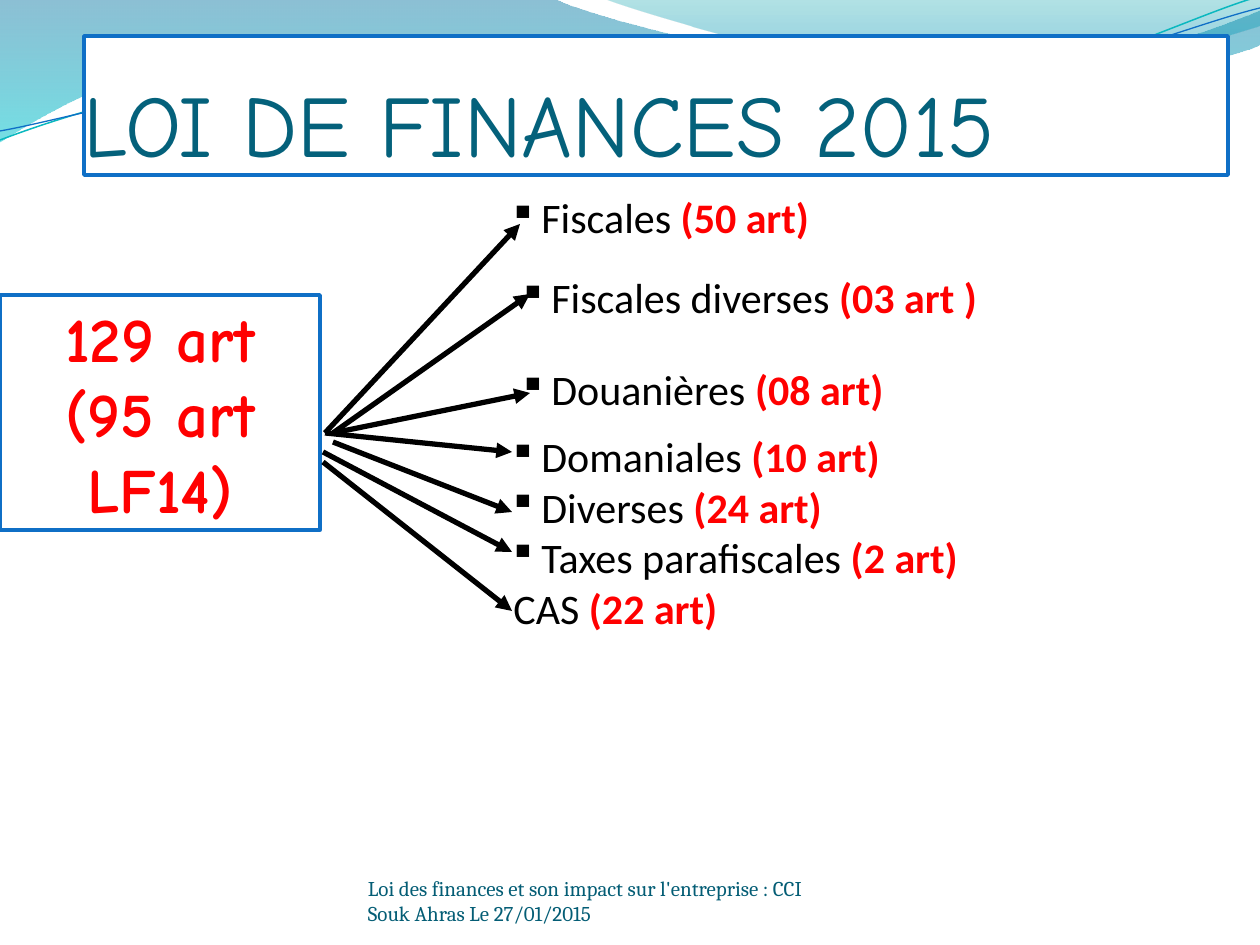
"""Build the slide that breaks down the articles of the 2015 finance law."""
from lxml import etree
from pptx import Presentation
from pptx.dml.color import RGBColor
from pptx.enum.shapes import MSO_CONNECTOR, MSO_SHAPE
from pptx.enum.text import MSO_ANCHOR, MSO_AUTO_SIZE, PP_ALIGN
from pptx.oxml.ns import qn
from pptx.util import Pt

PX = 914400 / 126
BLACK = RGBColor(0, 0, 0)
WHITE = RGBColor(255, 255, 255)
RED = RGBColor(255, 0, 0)
BLUE = RGBColor(0x0F, 0x6F, 0xC6)
AQUA = RGBColor(0x0A, 0xB8, 0xBF)
TEAL = RGBColor(0x04, 0x61, 0x7B)
FOOTER_TEAL = RGBColor(0x04, 0x5D, 0x75)

TITLE = ("LOI DE FINANCES 2015", (84, 36, 1144, 139))
TOTAL = ("129 art (95 art LF14)", (0, 295, 320, 235))
FOOTER = ("Loi des finances et son impact sur l'entreprise : CCI Souk Ahras Le 27/01/2015",
          (368, 876, 462, 50))

CATEGORY_BOXES = [
    ((501, 185, 816, 115), 7, [("§", "Fiscales ", "(50 art)")]),
    ((511, 265, 639, 115), 7, [("§", "Fiscales diverses ", "(03 art\u00a0)")]),
    ((511, 268, 748, 204), 96, [("§", "Douanières ", "(08 art)")]),
    ((501, 423, 725, 369), 8, [("§", "Domaniales ", "(10 art)"),
                               ("§", "Diverses ", "(24 art)"),
                               ("§", "Taxes parafiscales ", "(2 art)"),
                               (None, "CAS ", "(22 art)")]),
]
BULLET_FONT = "Wingdings"
BULLET_INDENT = 28

ARROWS = [
    ((325, 433), (520, 224)),
    ((333, 433), (530, 294)),
    ((333, 433), (530, 393)),
    ((325, 433), (512, 452)),
    ((333, 442), (512, 512)),
    ((323, 462), (512, 611)),
    ((323, 452), (512, 552)),
]

WAVE_BANDS = [
    ([(0, "0074A1", 45), (1, "00C6CF", 55)], (0, 0),
     [[(554, -1)], [(600, 21), (837, 79), (955, 79)],
      [(1074, 79), (1207, 33), (1260, 11)], [(1261, 45)],
      [(1239, 55), (1096, 96), (940, 95)], [(784, 95), (481, 35), (324, 43)],
      [(163, 45), (58, 105), (-1, 142)]]),
    ([(0, "00A1A9", 30), (0.8, "008BBF", 45)], (604, -1),
     [[(641, 14), (859, 78), (969, 82)], [(1079, 87), (1211, 40), (1260, 26)],
      [(1260, 0)]]),
]
WAVE_LINES = [
    (AQUA, 0.85, (0, 140),
     [[(60, 117), (199, 72), (349, 66)], [(498, 59), (747, 112), (898, 101)],
      [(1050, 89), (1182, 19), (1257, -3)]]),
    (BLUE, 0.75, (0, 131),
     [[(59, 121), (207, 77), (357, 71)], [(508, 64), (752, 106), (903, 95)],
      [(1053, 84), (1186, 26), (1260, 8)]]),
]


def scaled(lengths):
    return [round(length * PX) for length in lengths]


def add_wave(slide, start, segments, close):
    builder = slide.shapes.build_freeform(*start, scale=PX)
    builder.add_line_segments([point for segment in segments for point in segment], close=close)
    wave = builder.convert_to_shape()
    wave.shadow.inherit = False
    steps = wave._element.spPr.iter(qn("a:lnTo"))
    for segment, nodes in [(s, [next(steps) for _ in s]) for s in segments]:
        if len(segment) == 3:
            curve = etree.Element(qn("a:cubicBezTo"))
            nodes[0].addprevious(curve)
            for node in nodes:
                curve.append(node[0])
                node.getparent().remove(node)
    return wave


def add_band(slide, stops, start, segments):
    band = add_wave(slide, start, segments, True)
    band.line.fill.background()
    band.fill.gradient()
    band.fill.gradient_angle = 270
    for stop, (position, color, _) in zip(band.fill.gradient_stops, stops):
        stop.position = position
        stop.color.rgb = RGBColor.from_string(color)
    for node, (_, _, opacity) in zip(band._element.spPr.iter(qn("a:srgbClr")), stops):
        etree.SubElement(node, qn("a:alpha"), val=str(opacity * 1000))


def add_wave_line(slide, color, width, start, segments):
    wave = add_wave(slide, start, segments, False)
    wave.fill.background()
    wave.line.color.rgb = color
    wave.line.width = Pt(width)


def place(shape, box):
    for side, length in zip(("left", "top", "width", "height"), scaled(box)):
        setattr(shape, side, length)


def outline(shape):
    shape.fill.solid()
    shape.fill.fore_color.rgb = WHITE
    shape.line.color.rgb = BLUE
    shape.line.width = Pt(2)


def set_frame(shape, anchor, **margins):
    frame = shape.text_frame
    formats = {"word_wrap": True, "auto_size": MSO_AUTO_SIZE.NONE, "vertical_anchor": anchor}
    formats.update({f"margin_{side}": round(length * PX) for side, length in margins.items()})
    for name, value in formats.items():
        setattr(frame, name, value)
    return frame


def add_run(paragraph, text, color, **font):
    run = paragraph.add_run()
    run.text = text
    run.font.color.rgb = color
    for name, value in font.items():
        setattr(run.font, name, value)


def add_title(slide):
    text, box = TITLE
    title = slide.shapes.title
    slide.shapes._spTree.append(title._element)
    place(title, box)
    outline(title)
    paragraph = set_frame(title, MSO_ANCHOR.BOTTOM, left=0, top=6, right=0, bottom=0).paragraphs[0]
    paragraph.alignment = PP_ALIGN.LEFT
    add_run(paragraph, text, TEAL, name="Comic Neue", size=Pt(50))


def add_total(slide):
    text, box = TOTAL
    total = slide.shapes.add_shape(MSO_SHAPE.RECTANGLE, *scaled(box))
    total.shadow.inherit = False
    outline(total)
    paragraph = set_frame(total, MSO_ANCHOR.MIDDLE).paragraphs[0]
    paragraph.alignment = PP_ALIGN.CENTER
    paragraph.space_after = Pt(10)
    add_run(paragraph, text, RED, name="Comic Neue", size=Pt(36), bold=True)


def add_arrow(slide, start, end):
    arrow = slide.shapes.add_connector(MSO_CONNECTOR.STRAIGHT, *scaled(start + end))
    arrow.line.color.rgb = BLACK
    arrow.line.width = Pt(3)
    etree.SubElement(arrow.line._get_or_add_ln(), qn("a:tailEnd"), type="triangle")
    etree.SubElement(arrow._element.spPr, qn("a:effectLst"))


def add_categories(slide, box, top, categories):
    frame = set_frame(slide.shapes.add_textbox(*scaled(box)), MSO_ANCHOR.TOP, top=top)
    for index, (bullet, category, count) in enumerate(categories):
        paragraph = frame.add_paragraph() if index else frame.paragraphs[0]
        if bullet:
            properties = paragraph._p.get_or_add_pPr()
            properties.set("marL", str(round(BULLET_INDENT * PX)))
            properties.set("indent", str(round(-BULLET_INDENT * PX)))
            etree.SubElement(properties, qn("a:buFont"), typeface=BULLET_FONT)
            etree.SubElement(properties, qn("a:buChar"), char=bullet)
        add_run(paragraph, category, BLACK, name="Calibri", size=Pt(24))
        add_run(paragraph, count, RED, name="Calibri", size=Pt(24), bold=True)


def add_footer(slide):
    text, box = FOOTER
    footer = slide.shapes.add_textbox(*scaled(box))
    frame = set_frame(footer, MSO_ANCHOR.BOTTOM, left=0, top=0, right=0, bottom=0)
    add_run(frame.paragraphs[0], text, FOOTER_TEAL, name="Cambria", size=Pt(12))


def main():
    deck = Presentation()
    deck.slide_width, deck.slide_height = scaled((1260, 945))
    slide = deck.slides.add_slide(deck.slide_layouts[5])
    for band in WAVE_BANDS:
        add_band(slide, *band)
    for line in WAVE_LINES:
        add_wave_line(slide, *line)
    add_title(slide)
    add_total(slide)
    for arrow in ARROWS:
        add_arrow(slide, *arrow)
    for group in CATEGORY_BOXES:
        add_categories(slide, *group)
    add_footer(slide)
    deck.save("out.pptx")


if __name__ == "__main__":
    main()
